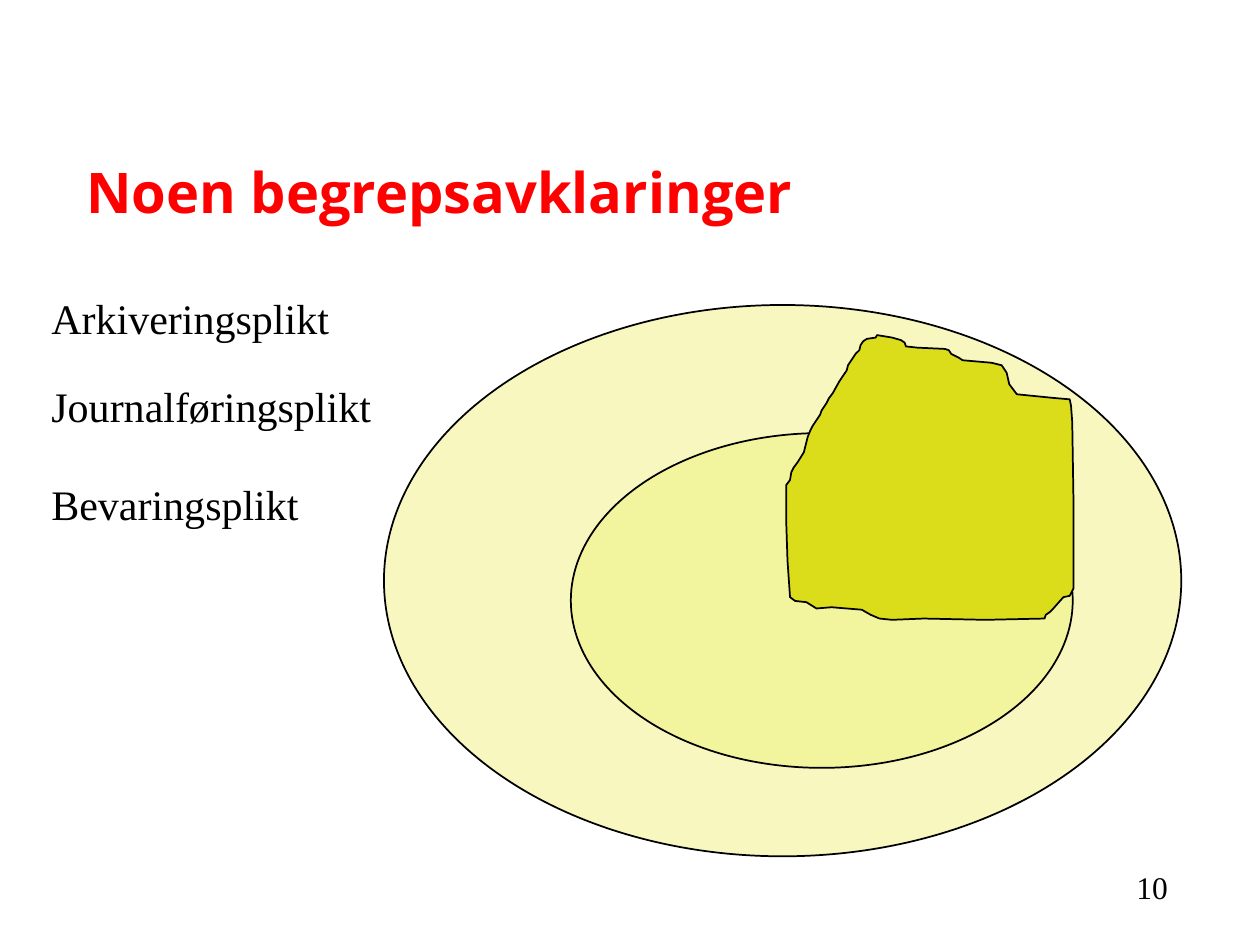
import pptx
import pptx.util
import pptx.dml.color
import pptx.enum.shapes
import pptx.enum.text

Pt = pptx.util.Pt
COLOURS = {
    "background": "FFFFFF",
    "text": "000000",
    "title": "FF0000",
    "archiving": "F7F7BF",
    "journal": "F2F49E",
    "preservation": "DBDD1A",
}
OUTLINE_UNIT = 0.72
PRESERVATION_OUTLINE = [
    (695, 268), (688, 269), (685, 271), (683, 274), (682, 278), (679, 281),
    (677, 284), (673, 290), (672, 294), (666, 303), (661, 312), (658, 316),
    (656, 320), (652, 326), (651, 329), (647, 335), (645, 338), (643, 342),
    (641, 347), (640, 351), (638, 359), (633, 367), (630, 371), (628, 375),
    (627, 381), (624, 385), (624, 415), (625, 445), (627, 474), (631, 477),
    (640, 478), (648, 483), (660, 482), (684, 484), (691, 488), (698, 491),
    (708, 492), (733, 491), (782, 492), (829, 491), (830, 488), (833, 486),
    (836, 483), (844, 474), (849, 473), (852, 467), (852, 400), (851, 335),
    (850, 322), (849, 317), (837, 316), (807, 313), (801, 305), (799, 296),
    (795, 290), (787, 288), (764, 286), (761, 284), (755, 281), (753, 278),
    (750, 277), (728, 276), (719, 275), (718, 272), (715, 270), (708, 268),
    (696, 266),
]


def colour(name):
    return pptx.dml.color.RGBColor.from_string(COLOURS[name])


def write_text(frame, text, size, font="Times New Roman", shade="text", bold=False):
    para = frame.paragraphs[0]
    para.alignment = pptx.enum.text.PP_ALIGN.LEFT
    span = para.add_run()
    span.text = text
    span.font.name = font
    span.font.size = Pt(size)
    span.font.bold = bold
    span.font.color.rgb = colour(shade)


def add_title(page, text):
    title = page.shapes.title
    title.left, title.top, title.width, title.height = Pt(42), Pt(60), Pt(630), Pt(72)
    title.text_frame.auto_size = pptx.enum.text.MSO_AUTO_SIZE.NONE
    title.text_frame.vertical_anchor = pptx.enum.text.MSO_ANCHOR.BOTTOM
    write_text(title.text_frame, text, 32, font="Open Sans", shade="title", bold=True)


def add_label(page, text, left, top, width, height, size):
    box = page.shapes.add_textbox(Pt(left), Pt(top), Pt(width), Pt(height))
    box.text_frame.word_wrap = True
    box.text_frame.auto_size = pptx.enum.text.MSO_AUTO_SIZE.SHAPE_TO_FIT_TEXT
    write_text(box.text_frame, text, size)


def paint(shape, shade):
    shape.shadow.inherit = False
    shape.fill.solid()
    shape.fill.fore_color.rgb = colour(shade)
    shape.line.color.rgb = colour("text")
    shape.line.width = Pt(1)


def add_ellipse(page, left, top, width, height, shade):
    kind = pptx.enum.shapes.MSO_SHAPE.OVAL
    paint(page.shapes.add_shape(kind, Pt(left), Pt(top), Pt(width), Pt(height)), shade)


def add_outline(page, points, shade):
    builder = page.shapes.build_freeform(*points[0], scale=Pt(OUTLINE_UNIT))
    builder.add_line_segments(points[1:], close=True)
    paint(builder.convert_to_shape(), shade)


def main():
    deck = pptx.Presentation()
    deck.slide_width, deck.slide_height = Pt(720), Pt(540)
    page = deck.slides.add_slide(deck.slide_layouts[5])
    page.background.fill.solid()
    page.background.fill.fore_color.rgb = colour("background")

    add_label(page, "10", 642.24, 492.5, 41.8, 28.8, 18)
    add_title(page, "Noen begrepsavklaringer")
    add_ellipse(page, 219.4, 174.3, 455.6, 315, "archiving")
    add_ellipse(page, 326.2, 247.5, 286.8, 191.3, "journal")
    add_outline(page, PRESERVATION_OUTLINE, "preservation")

    for text, top, width in (
        ("Arkiveringsplikt", 163.4, 292.3),
        ("Journalføringsplikt", 213.8, 235.4),
        ("Bevaringsplikt", 270, 191.5),
    ):
        add_label(page, text, 22.3, top, width, 36.7, 24)

    deck.save("out.pptx")


if __name__ == "__main__":
    main()
